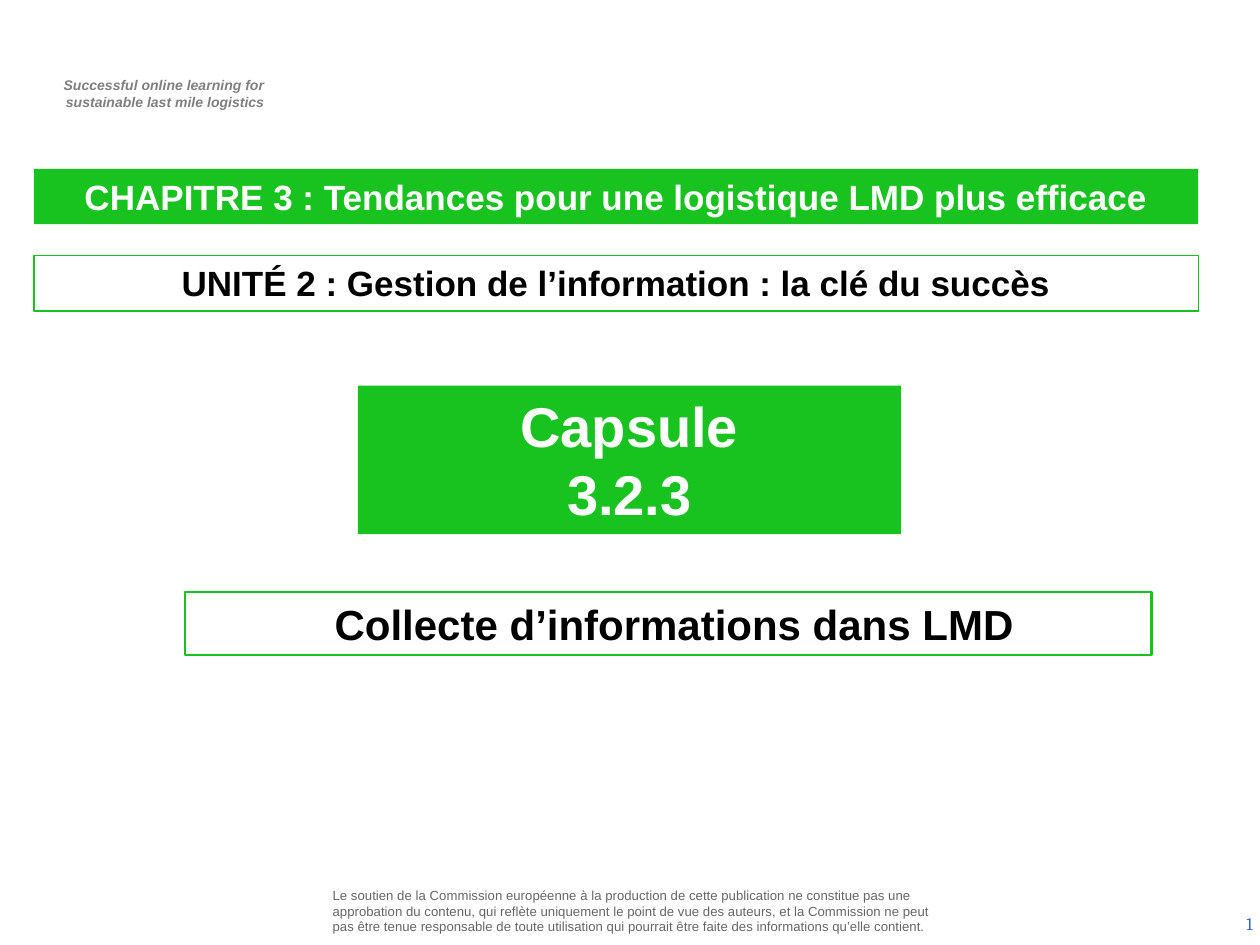
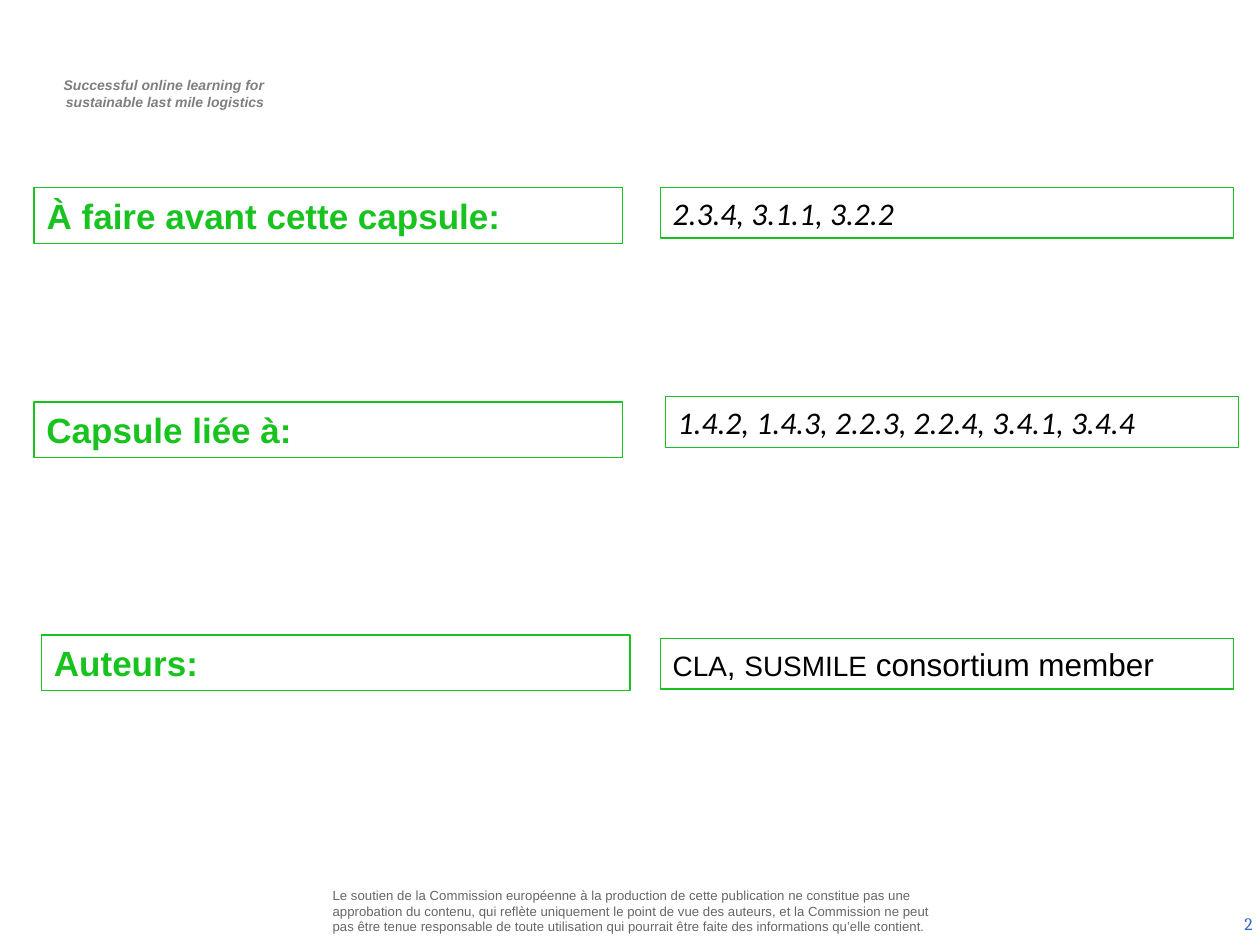
from dataclasses import dataclass

from lxml.etree import SubElement
from pptx import Presentation
from pptx.dml.color import RGBColor as RGB
from pptx.enum.shapes import MSO_SHAPE as Shape
from pptx.enum.text import MSO_ANCHOR as Anchor, MSO_AUTO_SIZE as AutoSize, PP_ALIGN as Align
from pptx.oxml.ns import qn
from pptx.util import Inches, Pt

COLS, ROWS = 100, 75
WIDTH, HEIGHT = Inches(10), Inches(7.5)


@dataclass(frozen=True)
class Theme:
    green: RGB = RGB(0x18, 0xC3, 0x20)
    white: RGB = RGB(0xFF, 0xFF, 0xFF)
    black: RGB = RGB(0, 0, 0)
    motto: RGB = RGB(0x7F, 0x7F, 0x7F)
    notice: RGB = RGB(0x66, 0x66, 0x66)
    number: RGB = RGB(0x33, 0x66, 0xCC)
    sans: str = "Arial"
    codes: str = "Calibri"
    serif: str = "Cambria"
    hero: float = 32
    topic: float = 24
    heading: float = 20
    answer: float = 18
    acronym: float = 16
    page: float = 10
    small: float = 8
    legal: float = 7.5


T = Theme()

MOTTO = ["Successful online learning for", "sustainable last mile logistics"]
NOTICE = (
    "Le soutien de la Commission européenne à la production de cette publication "
    "ne constitue pas une approbation du contenu, qui reflète uniquement le point "
    "de vue des auteurs, et la Commission ne peut pas être tenue responsable de "
    "toute utilisation qui pourrait être faite des informations qu’elle contient."
)


def grid(col, row, cols, rows):
    x, y = WIDTH / COLS, HEIGHT / ROWS
    return [int(v) for v in (col * x, row * y, cols * x, rows * y)]


def place(sp, cell):
    sp.left, sp.top, sp.width, sp.height = grid(*cell)


def frame(sp, anchor=Anchor.TOP, insets=(1, 0.5, 1, 0.5)):
    tf = sp.text_frame
    tf.word_wrap = True
    tf.auto_size = AutoSize.NONE
    tf.vertical_anchor = anchor
    tf.margin_left, tf.margin_top, tf.margin_right, tf.margin_bottom = grid(*insets)
    return tf


def style(p, size, color, name=T.sans, bold=False, italic=False, align=Align.LEFT):
    p.alignment = align
    f = p.font
    f.size, f.name, f.bold, f.italic = Pt(size), name, bold, italic
    f.color.rgb = color


def write(tf, lines, **look):
    for i, line in enumerate(lines):
        p = tf.add_paragraph() if i else tf.paragraphs[0]
        p.text = line
        style(p, **look)


def paint(sp, fill=None, line=None, weight=0.75):
    if fill is None:
        sp.fill.background()
    else:
        sp.fill.solid()
        sp.fill.fore_color.rgb = fill
    if line is None:
        sp.line.fill.background()
    else:
        sp.line.color.rgb = line
        sp.line.width = Pt(weight)


def box(s, cell, fill=None, line=None, weight=0.75, insets=(1, 0.5, 1, 0.5)):
    sp = s.shapes.add_shape(Shape.RECTANGLE, *grid(*cell))
    sp.shadow.inherit = False
    paint(sp, fill, line, weight)
    return frame(sp, insets=insets)


def title(s, cell, fill, line=None):
    sp = s.shapes.title
    place(sp, cell)
    paint(sp, fill, line)
    return frame(sp)


def label(s, cell, lines, anchor, insets, **look):
    sp = s.shapes.add_textbox(*grid(*cell))
    write(frame(sp, anchor, insets), lines, **look)
    return sp


def brand_layout(s):
    shared = [
        label(s, (2.9, 5.6, 20.3, 3.7), MOTTO, Anchor.TOP, (1, 0.5, 2.2, 0.5),
              size=T.small, color=T.motto, bold=True, italic=True, align=Align.RIGHT),
        label(s, (26, 69.8, 48.4, 5), [NOTICE], Anchor.MIDDLE, (0.4,) * 4,
              size=T.legal, color=T.notice),
    ]
    for sp in shared:
        s.slide_layout.shapes.element.append(sp.element)


def page_number(s, number):
    sp = s.shapes.add_textbox(*grid(77.1, 71.3, 23.3, 4))
    p = frame(sp, Anchor.MIDDLE).paragraphs[0]
    style(p, T.page, T.number, T.serif, align=Align.RIGHT)
    fld = SubElement(p._p, qn("a:fld"), type="slidenum",
                     id="{5B1C7A52-6C0E-4B7E-9A53-2F0D3C8E1A11}")
    SubElement(fld, qn("a:rPr"), lang="fr-FR")
    SubElement(fld, qn("a:t")).text = str(number)


def cover(s):
    centred = dict(bold=True, align=Align.CENTER)
    write(title(s, (28.4, 30.6, 43.1, 11.8), T.green), ["Capsule", "3.2.3"],
          size=T.hero, color=T.white, **centred)
    write(box(s, (14.7, 47, 76.7, 5), line=T.green, weight=1.5, insets=(1.9, 0.5, 1, 0.5)),
          ["Collecte d’informations dans LMD"], size=T.topic, color=T.black, **centred)
    write(box(s, (2.7, 13.4, 92.4, 4.4), fill=T.green),
          ["CHAPITRE 3 : Tendances pour une logistique LMD plus efficace"],
          size=T.heading, color=T.white, **centred)
    write(box(s, (2.7, 20.3, 92.4, 4.4), line=T.green),
          ["UNITÉ 2 : Gestion de l’information : la clé du succès"],
          size=T.heading, color=T.black, **centred)


def answer_box(s, col, row):
    return box(s, (col, row, 45.5, 4), T.white, T.green)


def authors(tf):
    p = tf.paragraphs[0]
    for text, size in (("CLA", T.acronym), (", ", T.answer),
                       ("SUSMILE", T.acronym), (" consortium member", T.answer)):
        r = p.add_run()
        r.text = text
        r.font.size = Pt(size)
    style(p, T.answer, T.black)


def context(s):
    heading = dict(size=T.heading, color=T.green, bold=True)
    codes = dict(size=T.answer, color=T.black, name=T.codes, italic=True)
    write(title(s, (2.7, 14.9, 46.7, 4.4), T.white, T.green),
          ["À faire avant cette capsule:"], **heading)
    for col, row, text in ((2.7, 31.9, "Capsule liée à:"), (3.3, 50.4, "Auteurs:")):
        write(box(s, (col, row, 46.7, 4.4), T.white, T.green), [text], **heading)
    for col, row, text in ((52.4, 14.9, "2.3.4, 3.1.1, 3.2.2"),
                           (52.8, 31.5, "1.4.2, 1.4.3, 2.2.3, 2.2.4, 3.4.1, 3.4.4")):
        write(answer_box(s, col, row), [text], **codes)
    authors(answer_box(s, 52.4, 50.7))


def main():
    prs = Presentation()
    prs.slide_width, prs.slide_height = WIDTH, HEIGHT
    layout = prs.slide_layouts[5]
    for number, build in enumerate((cover, context), 1):
        s = prs.slides.add_slide(layout)
        if number == 1:
            brand_layout(s)
        page_number(s, number)
        build(s)
    prs.save("out.pptx")


if __name__ == "__main__":
    main()
